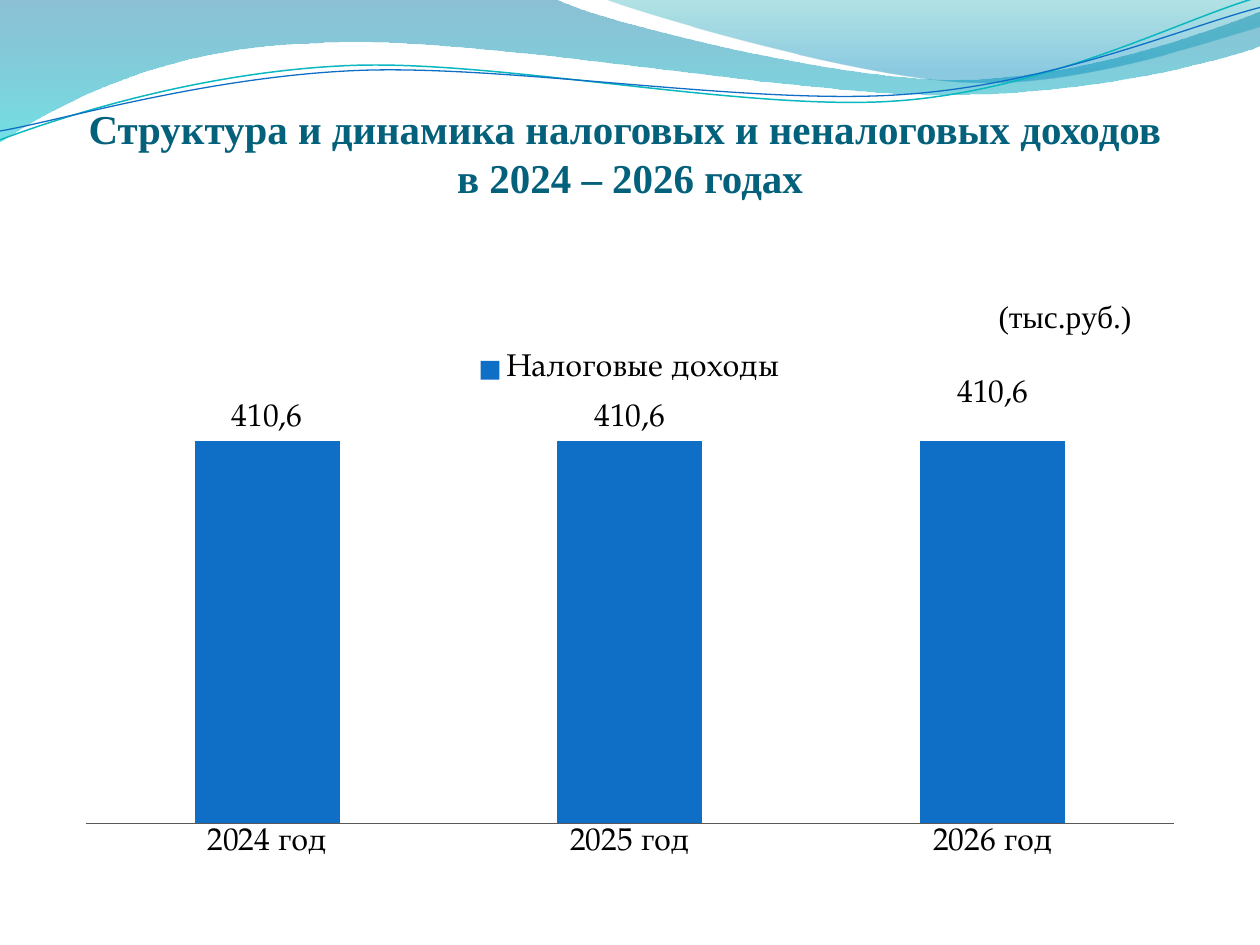
import math
from dataclasses import dataclass
from lxml import etree
from pptx import Presentation
from pptx import util as u
from pptx.chart import data as chart_data
from pptx.dml.color import RGBColor
from pptx.enum import chart as ch, text
from pptx.oxml import ns

Point = tuple[float, float]


@dataclass(frozen=True)
class Theme:
    heading: str = "04617B"
    body: str = "000000"
    bar: str = "0F6FC6"
    axis: str = "595959"
    teal_line: str = "0AB8BF"
    serif: str = "Times New Roman"
    chart_font: str = "TeX Gyre Pagella"
    heading_size: float = 23.4
    chart_size: float = 18


@dataclass(frozen=True)
class Stop:
    position: float
    color: str
    opacity: int


@dataclass(frozen=True)
class Line:
    color: str
    width: float
    tilt: float
    center: Point


@dataclass(frozen=True)
class Wave:
    start: Point
    segments: tuple[tuple[Point, ...], ...]
    stops: tuple[Stop, ...] = ()
    line: Line | None = None


THEME = Theme()
WAVES = (
    Wave((0, 0), (
        ((4.4, -0.01),),
        ((4.76, 0.17), (6.64, 0.63), (7.58, 0.63)),
        ((8.53, 0.63), (9.58, 0.26), (10, 0.09)),
        ((10.01, 0.36),),
        ((9.83, 0.44), (8.7, 0.76), (7.46, 0.75)),
        ((6.22, 0.75), (3.82, 0.28), (2.57, 0.34)),
        ((1.29, 0.36), (0.46, 0.83), (-0.01, 1.13)),
        ((0, 0),),
    ), stops=(Stop(0, "0074A1", 45), Stop(1, "00C6CF", 55))),
    Wave((4.79, -0.01), (
        ((5.09, 0.11), (6.82, 0.62), (7.69, 0.65)),
        ((8.56, 0.69), (9.61, 0.32), (10, 0.21)),
        ((10, 0),),
        ((4.79, -0.01),),
    ), stops=(Stop(0, "00A1A9", 30), Stop(0.8, "008BBF", 45))),
    Wave((0, 1.11), (
        ((0.48, 0.93), (1.58, 0.57), (2.77, 0.52)),
        ((3.95, 0.47), (5.93, 0.89), (7.13, 0.8)),
        ((8.33, 0.71), (9.38, 0.15), (9.98, -0.02)),
    ), line=Line(THEME.teal_line, 0.85, -2.7, (4.99, 0.58))),
    Wave((0, 1.04), (
        ((0.47, 0.96), (1.64, 0.61), (2.83, 0.56)),
        ((4.03, 0.51), (5.97, 0.84), (7.17, 0.75)),
        ((8.36, 0.67), (9.41, 0.21), (10, 0.06)),
    ), line=Line(THEME.bar, 0.75, -2.7, (5, 0.59))),
)


def rgb(value: str) -> RGBColor:
    return RGBColor.from_string(value)


def style_font(font, name: str, size: float, color: str, bold: bool = False) -> None:
    font.name, font.size, font.bold = name, u.Pt(size), bold
    font.color.rgb = rgb(color)


def turn(point: Point, center: Point, degrees: float) -> Point:
    angle = math.radians(degrees)
    dx, dy = point[0] - center[0], point[1] - center[1]
    return (center[0] + dx * math.cos(angle) - dy * math.sin(angle),
            center[1] + dx * math.sin(angle) + dy * math.cos(angle))


def bend(ribbon, wave: Wave) -> None:
    steps = iter(ribbon._element.xpath(".//a:path/a:lnTo"))
    for segment in wave.segments:
        controls = [next(steps) for _ in segment]
        if len(controls) == 3:
            curve = etree.Element(ns.qn("a:cubicBezTo"))
            controls[0].addprevious(curve)
            for control in controls:
                curve.append(control[0])
                control.getparent().remove(control)


def draw_wave(slide, wave: Wave) -> None:
    nodes = [wave.start, *(node for segment in wave.segments for node in segment)]
    if wave.line:
        nodes = [turn(node, wave.line.center, -wave.line.tilt) for node in nodes]
    outline = [(u.Inches(x), u.Inches(y)) for x, y in nodes]
    builder = slide.shapes.build_freeform(*outline[0])
    builder.add_line_segments(outline[1:], close=bool(wave.stops))
    ribbon = builder.convert_to_shape()
    bend(ribbon, wave)
    ribbon.shadow.inherit = False
    if wave.line:
        ribbon.rotation = wave.line.tilt
        ribbon.fill.background()
        ribbon.line.color.rgb = rgb(wave.line.color)
        ribbon.line.width = u.Pt(wave.line.width)
        return
    ribbon.line.fill.background()
    ribbon.fill.gradient()
    ribbon.fill.gradient_angle = 270
    for gradient_stop, stop in zip(ribbon.fill.gradient_stops, wave.stops):
        gradient_stop.position = stop.position
        gradient_stop.color.rgb = rgb(stop.color)
    for color, stop in zip(ribbon._element.xpath(".//a:gs/a:srgbClr"), wave.stops):
        etree.SubElement(color, ns.qn("a:alpha"), val=str(stop.opacity * 1000))


def draw_heading(slide) -> None:
    heading = slide.shapes.add_textbox(u.Inches(0.5), u.Inches(0.77), u.Inches(9), u.Inches(1.25))
    frame = heading.text_frame
    frame.word_wrap = True
    frame.margin_left = frame.margin_right = frame.margin_bottom = 0
    frame.margin_top = u.Inches(0.05)
    frame.vertical_anchor = text.MSO_ANCHOR.TOP
    paragraph = frame.paragraphs[0]
    paragraph.text = "Структура и динамика налоговых и неналоговых доходов \vв 2024 – 2026 годах"
    paragraph.alignment = text.PP_ALIGN.CENTER
    for run in paragraph.runs:
        style_font(run.font, THEME.serif, THEME.heading_size, THEME.heading, True)


def place(element, after: str, **settings: str | float) -> None:
    for old in element.findall(ns.qn("c:layout")):
        element.remove(old)
    layout = etree.Element(ns.qn("c:layout"))
    manual = etree.SubElement(layout, ns.qn("c:manualLayout"))
    for tag, value in settings.items():
        etree.SubElement(manual, ns.qn(f"c:{tag}"), val=str(value))
    anchor = element.find(ns.qn(after)) if after else None
    if anchor is None:
        element.insert(0, layout)
    else:
        anchor.addnext(layout)


def draw_income_chart(slide) -> None:
    income = chart_data.CategoryChartData(number_format="#,##0.00")
    income.categories = [f"{year} год" for year in (2024, 2025, 2026)]
    income.add_series("Налоговые доходы", (410.6, 410.6, 410.6))
    chart = slide.shapes.add_chart(
        ch.XL_CHART_TYPE.COLUMN_CLUSTERED, u.Inches(0.5), u.Inches(2.12),
        u.Inches(9), u.Inches(4.8), income).chart
    style_font(chart.font, THEME.chart_font, THEME.chart_size, THEME.body)

    chart.has_title = True
    unit = chart.chart_title.text_frame
    unit.text = "(тыс.руб.)"
    style_font(unit.paragraphs[0].runs[0].font, THEME.serif, THEME.chart_size, THEME.body)
    chart.has_legend = True
    chart.legend.position = ch.XL_LEGEND_POSITION.TOP
    chart.legend.include_in_layout = False

    years, amounts = chart.category_axis, chart.value_axis
    years.major_tick_mark = ch.XL_TICK_MARK.NONE
    years.format.line.color.rgb = rgb(THEME.axis)
    years.format.line.width = u.Pt(1)
    amounts.visible = False
    amounts.has_major_gridlines = False
    amounts.minimum_scale, amounts.maximum_scale = 0, 448

    plot = chart.plots[0]
    plot.vary_by_categories = False
    plot.gap_width, plot.overlap = 150, -25
    series = plot.series[0]
    series.format.fill.solid()
    series.format.fill.fore_color.rgb = rgb(THEME.bar)
    series.data_labels.show_value = True
    series.data_labels.number_format = "#,##0.00"
    series.data_labels.number_format_is_linked = False
    for index, value in enumerate(series.values):
        label = series.points[index].data_label
        label.text_frame.text = f"{value:.1f}".replace(".", ",")
        style_font(label.text_frame.paragraphs[0].runs[0].font,
                   THEME.chart_font, THEME.chart_size, THEME.body)
        label.position = ch.XL_LABEL_POSITION.OUTSIDE_END
    for leader in series._element.xpath(".//c:showLeaderLines"):
        leader.set("val", "0")

    place(series._element.xpath(".//c:dLbl")[-1], "c:idx", x=0, y=-0.04)
    place(chart.chart_title._element, "c:tx", xMode="edge", yMode="edge", x=0.82, y=0.04)
    place(chart._chartSpace.xpath(".//c:plotArea")[0], "", layoutTarget="inner",
          xMode="edge", yMode="edge", x=0.02, y=0.23, w=0.96, h=0.69)


def main() -> None:
    deck = Presentation()
    deck.slide_width, deck.slide_height = u.Inches(10), u.Inches(7.5)
    slide = deck.slides.add_slide(deck.slide_layouts[6])
    for wave in WAVES:
        draw_wave(slide, wave)
    draw_heading(slide)
    draw_income_chart(slide)
    deck.save("out.pptx")


if __name__ == "__main__":
    main()
